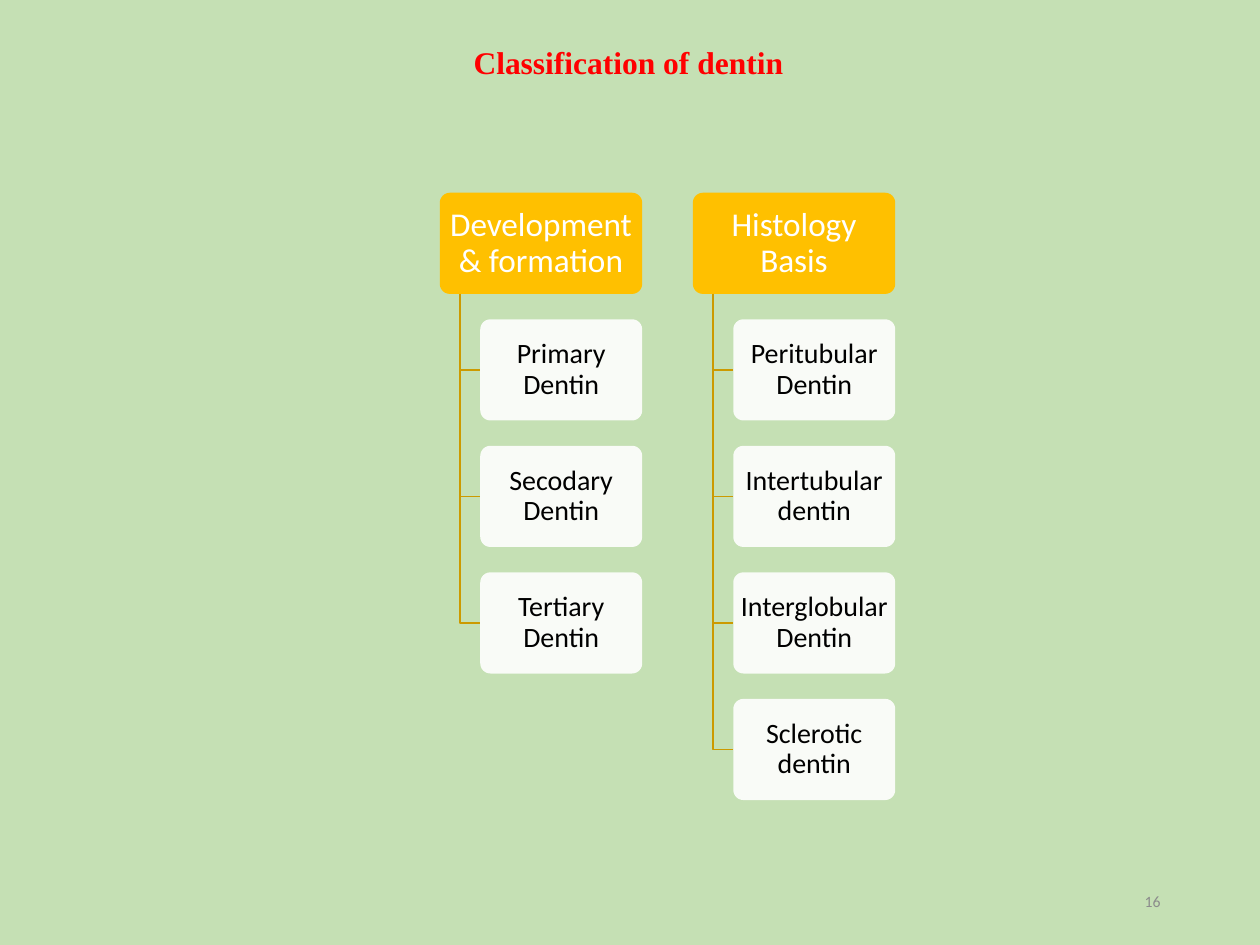
import dataclasses

import lxml.etree
import pptx
import pptx.dml.color
import pptx.enum.shapes
import pptx.enum.text
import pptx.oxml.ns
import pptx.util

Inches = pptx.util.Inches
RGBColor = pptx.dml.color.RGBColor
ALIGN = pptx.enum.text.PP_ALIGN
ANCHOR = pptx.enum.text.MSO_ANCHOR


@dataclasses.dataclass(frozen=True)
class Theme:
    background: str = "C5E0B4"
    title: str = "FF0000"
    heading_fill: str = "FFC000"
    heading_text: str = "FFFFFF"
    item_fill: str = "FFFFFF"
    item_text: str = "000000"
    branch: str = "CC9A00"
    number: str = "8C8C8C"
    title_font: str = "Times New Roman"
    body_font: str = "Calibri"
    title_size: int = 18
    heading_size: int = 19
    item_size: int = 16
    number_size: int = 9


theme = Theme()


def write_text(shape, text, *, size, color, font=theme.body_font, bold=False,
               align=ALIGN.CENTER, anchor=ANCHOR.MIDDLE, wrap=True,
               line_spacing=None, insets=(0.1, 0.05)):
    frame = shape.text_frame
    frame.word_wrap = wrap
    frame.vertical_anchor = anchor
    frame.margin_left = frame.margin_right = Inches(insets[0])
    frame.margin_top = frame.margin_bottom = Inches(insets[1])
    paragraph = frame.paragraphs[0]
    paragraph.alignment = align
    paragraph.line_spacing = line_spacing
    run = paragraph.add_run()
    run.text = text
    run.font.name = font
    run.font.size = pptx.util.Pt(size)
    run.font.bold = bold
    run.font.color.rgb = RGBColor.from_string(color)


def add_box(left, top, width, height, fill):
    box = slide.shapes.add_shape(
        pptx.enum.shapes.MSO_SHAPE.ROUNDED_RECTANGLE,
        Inches(left), Inches(top), Inches(width), Inches(height))
    box.adjustments[0] = 0.1
    box.shadow.inherit = False
    box.fill.solid()
    box.fill.fore_color.rgb = RGBColor.from_string(fill)
    box.line.fill.background()
    return box


presentation = pptx.Presentation()
presentation.slide_width = Inches(10)
presentation.slide_height = Inches(7.5)
slide = presentation.slides.add_slide(presentation.slide_layouts[6])
slide.background.fill.solid()
slide.background.fill.fore_color.rgb = RGBColor.from_string(theme.background)

title = slide.shapes.add_textbox(Inches(3.66), Inches(0.29), Inches(2.68), Inches(0.4))
write_text(title, "Classification of dentin", size=theme.title_size, color=theme.title,
           font=theme.title_font, bold=True, align=ALIGN.LEFT, anchor=ANCHOR.TOP, wrap=False)
title.text_frame.auto_size = pptx.enum.text.MSO_AUTO_SIZE.SHAPE_TO_FIT_TEXT

classes = {
    "Development & formation": ["Primary Dentin", "Secodary Dentin", "Tertiary Dentin"],
    "Histology Basis": ["Peritubular Dentin", "Intertubular dentin",
                        "Interglobular Dentin", "Sclerotic dentin"],
}

# Five boxes with gaps of a quarter box fill the height of the tree.
tree_left, tree_top, tree_height = 3.49, 1.53, 4.82
box_height = tree_height / 6
row_pitch = 1.25 * box_height
heading_width = 2 * box_height
column_pitch = 2.5 * box_height
item_indent = heading_width / 5
item_width = heading_width - item_indent

for column, (heading, items) in enumerate(classes.items()):
    left = tree_left + column * column_pitch
    heading_box = add_box(left, tree_top, heading_width, box_height, theme.heading_fill)
    write_text(heading_box, heading, size=theme.heading_size, color=theme.heading_text,
               line_spacing=0.9, insets=(0.04, 0.03))

    trunk_x = left + item_indent / 2
    trunk_top = tree_top + box_height
    item_left = left + item_indent
    for row, item in enumerate(items, start=1):
        item_top = tree_top + row * row_pitch
        item_middle = item_top + box_height / 2

        builder = slide.shapes.build_freeform(Inches(trunk_x), Inches(trunk_top))
        builder.add_line_segments(
            [(Inches(trunk_x), Inches(item_middle)), (Inches(item_left), Inches(item_middle))],
            close=False)
        branch = builder.convert_to_shape()
        branch.shadow.inherit = False
        branch.fill.background()
        branch.line.color.rgb = RGBColor.from_string(theme.branch)
        branch.line.width = pptx.util.Pt(1)

        item_box = add_box(item_left, item_top, item_width, box_height, theme.item_fill)
        fill_color = item_box.fill._xPr.find(".//" + pptx.oxml.ns.qn("a:srgbClr"))
        lxml.etree.SubElement(fill_color, pptx.oxml.ns.qn("a:alpha")).set("val", "90000")
        write_text(item_box, item, size=theme.item_size, color=theme.item_text,
                   line_spacing=0.9, insets=(0.03, 0.02))

number = slide.shapes.add_textbox(Inches(7.06), Inches(6.95), Inches(2.25), Inches(0.4))
write_text(number, "16", size=theme.number_size, color=theme.number, align=ALIGN.RIGHT)

presentation.save("out.pptx")
